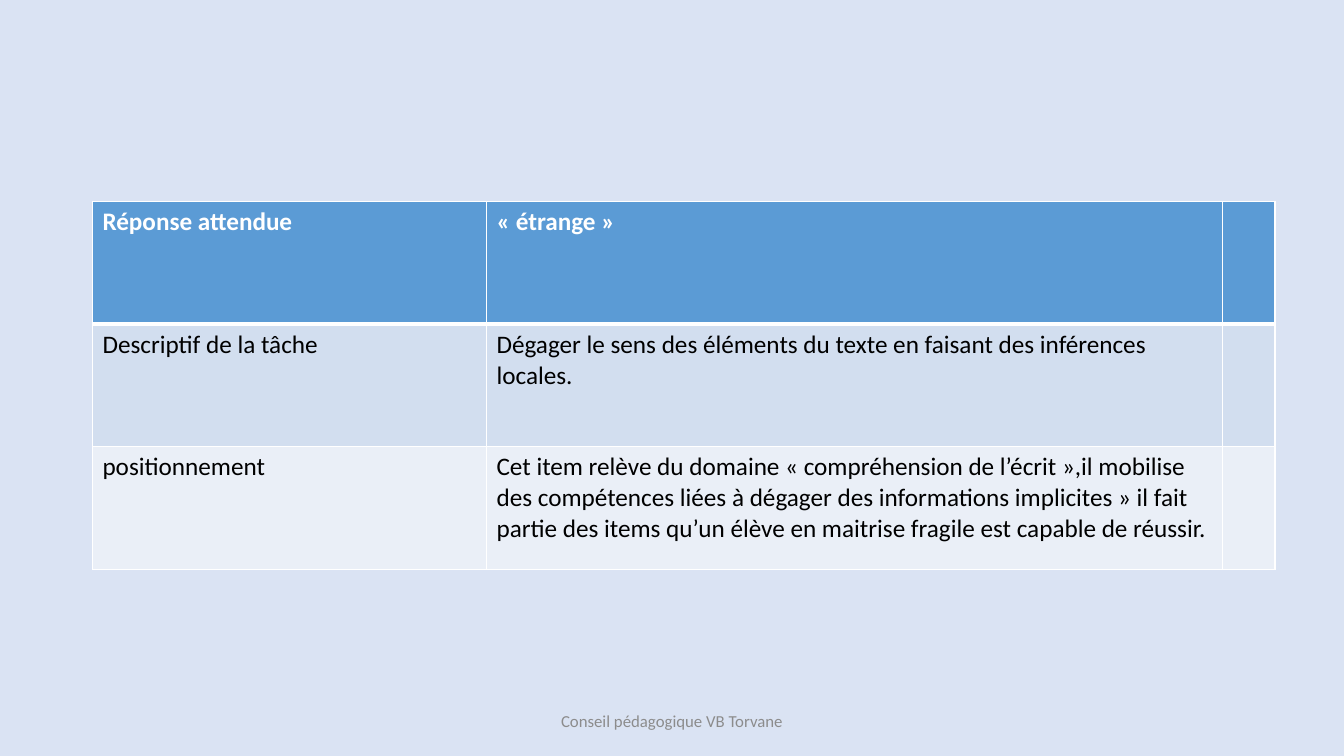
"""Build the slide describing the expected answer, the task and the level."""
import dataclasses

import lxml.etree
import pptx
import pptx.dml.color
import pptx.enum.text
import pptx.oxml.ns
import pptx.slide
import pptx.table
import pptx.text.text
import pptx.util

Cm = pptx.util.Cm
Pt = pptx.util.Pt

FONT = "Calibri"
COLUMN_WIDTHS = (9.93, 18.55, 1.32)
ROW_HEIGHT = 3.09
THIN_BORDER = 1
HEADER_BORDER = 3


@dataclasses.dataclass(frozen=True)
class TableRow:
    label: str
    content: str
    fill: str
    color: str = "000000"
    bold: bool = False
    top_border: float = THIN_BORDER
    bottom_border: float = THIN_BORDER


ROWS = (
    TableRow("Réponse attendue", "« étrange »", "5B9BD5", "FFFFFF", True,
             bottom_border=HEADER_BORDER),
    TableRow("Descriptif de la tâche",
             "Dégager le sens des éléments du texte en faisant des inférences locales.",
             "D2DEEF", top_border=HEADER_BORDER),
    TableRow("positionnement",
             "Cet item relève du domaine « compréhension de l’écrit »,il mobilise "
             "des compétences liées à dégager des informations implicites » il fait "
             "partie des items qu’un élève en maitrise fragile est capable de réussir.",
             "EAEFF7"),
)


def rgb(color: str) -> pptx.dml.color.RGBColor:
    return pptx.dml.color.RGBColor.from_string(color)


def format_runs(paragraph: pptx.text.text._Paragraph, size: float, color: str,
                bold: bool = False) -> None:
    for run in paragraph.runs:
        run.font.name = FONT
        run.font.size = Pt(size)
        run.font.bold = bold
        run.font.color.rgb = rgb(color)


def add_border(cell: pptx.table._Cell, side: str, width: float, color: str) -> None:
    qn = pptx.oxml.ns.qn
    properties = cell._tc.get_or_add_tcPr()
    line = lxml.etree.SubElement(properties, qn(f"a:ln{side}"), w=str(int(Pt(width))))
    fill = lxml.etree.SubElement(line, qn("a:solidFill"))
    lxml.etree.SubElement(fill, qn("a:srgbClr"), val=color)


def fill_cell(cell: pptx.table._Cell, text: str, row: TableRow) -> None:
    borders = {"L": THIN_BORDER, "R": THIN_BORDER,
               "T": row.top_border, "B": row.bottom_border}
    for side, width in borders.items():
        add_border(cell, side, width, "FFFFFF")
    cell.fill.solid()
    cell.fill.fore_color.rgb = rgb(row.fill)
    cell.text_frame.text = text
    format_runs(cell.text_frame.paragraphs[0], 18, row.color, row.bold)


def add_item_table(slide: pptx.slide.Slide) -> None:
    shape = slide.shapes.add_table(
        len(ROWS), len(COLUMN_WIDTHS), Cm(2.33), Cm(5.08),
        Cm(sum(COLUMN_WIDTHS)), Cm(ROW_HEIGHT * len(ROWS)))
    table = shape.table
    for column, width in zip(table.columns, COLUMN_WIDTHS):
        column.width = Cm(width)
    for row_index, row in enumerate(ROWS):
        table.rows[row_index].height = Cm(ROW_HEIGHT)
        for column_index, text in enumerate((row.label, row.content, "")):
            fill_cell(table.cell(row_index, column_index), text, row)


def add_footer(slide: pptx.slide.Slide, text: str) -> None:
    shape = slide.shapes.add_textbox(Cm(11.22), Cm(17.65), Cm(11.43), Cm(1.02))
    text_frame = shape.text_frame
    text_frame.word_wrap = True
    text_frame.vertical_anchor = pptx.enum.text.MSO_ANCHOR.MIDDLE
    text_frame.text = text
    paragraph = text_frame.paragraphs[0]
    paragraph.alignment = pptx.enum.text.PP_ALIGN.CENTER
    format_runs(paragraph, 12, "8C8C8C")


def main() -> None:
    presentation = pptx.Presentation()
    presentation.slide_width = Cm(33.87)
    presentation.slide_height = Cm(19.05)
    slide = presentation.slides.add_slide(presentation.slide_layouts[6])
    slide.background.fill.solid()
    slide.background.fill.fore_color.rgb = rgb("DAE3F3")
    add_item_table(slide)
    add_footer(slide, "Conseil pédagogique VB Torvane")
    presentation.save("out.pptx")


if __name__ == "__main__":
    main()
